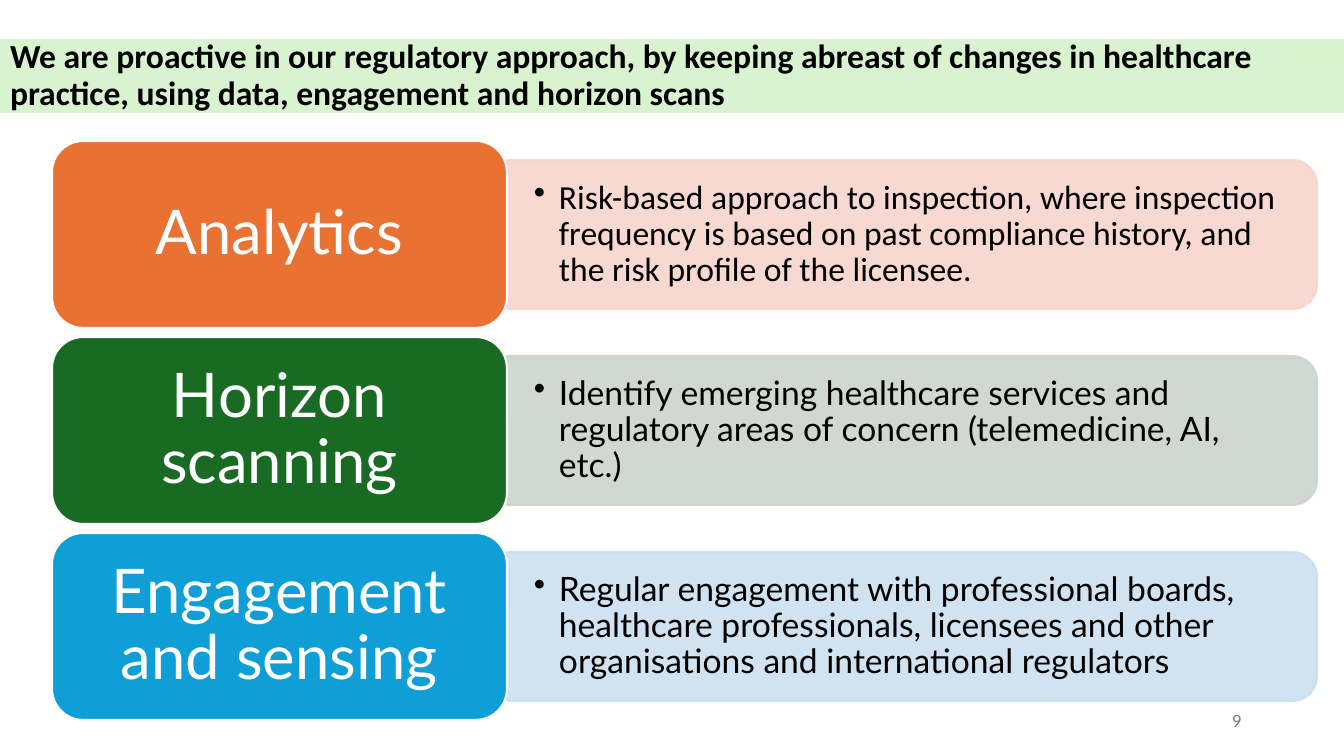
"""Build the slide on the proactive regulatory approach."""
import pptx
import pptx.util
import pptx.dml.color
import pptx.enum.shapes
import pptx.enum.text
import pptx.oxml
import pptx.oxml.ns

PX = 12192000 / 1344
RGB = pptx.dml.color.RGBColor
SHAPE = pptx.enum.shapes.MSO_SHAPE
ALIGN = pptx.enum.text.PP_ALIGN
BLACK, WHITE, GREY = RGB(0, 0, 0), RGB(255, 255, 255), RGB(0x79, 0x79, 0x79)
PALE_GREEN = RGB(0xD9, 0xF2, 0xD0)
ORANGE, GREEN, BLUE = RGB(0xE9, 0x71, 0x32), RGB(0x19, 0x6B, 0x24), RGB(0x0F, 0x9E, 0xD5)
PALE_ORANGE, GREY_GREEN, PALE_BLUE = RGB(0xF7, 0xD5, 0xCE), RGB(0xCC, 0xD4, 0xCD), RGB(0xCC, 0xDF, 0xEF)

ROWS = [
    ("Analytics", ORANGE, PALE_ORANGE, "Calibri",
     "Risk-based approach to inspection, where inspection frequency is based on past "
     "compliance history, and the risk profile of the licensee."),
    ("Horizon scanning", GREEN, GREY_GREEN, "Lato",
     "Identify emerging healthcare services and regulatory areas of concern "
     "(telemedicine, AI, etc.)"),
    ("Engagement and sensing", BLUE, PALE_BLUE, "Lato",
     "Regular engagement with professional boards, healthcare professionals, licensees "
     "and other organisations and international regulators"),
]
ROW_TOP, ROW_PITCH, LABEL_H = 141, 196, 187
PANEL_X, PANEL_LENGTH, PANEL_DEPTH = 507, 810, 149


def box(*lengths):
    return [round(n * PX) for n in lengths]


def write(sp, text, align, font, insets=(10, 5), spacing=0.9):
    tf = sp.text_frame
    dx, dy = box(*insets)
    frame = {"word_wrap": True, "auto_size": pptx.enum.text.MSO_AUTO_SIZE.NONE,
             "vertical_anchor": pptx.enum.text.MSO_ANCHOR.MIDDLE,
             "margin_left": dx, "margin_right": dx, "margin_top": dy, "margin_bottom": dy}
    for name, value in frame.items():
        setattr(tf, name, value)
    p = tf.paragraphs[0]
    p.alignment, p.line_spacing = align, spacing
    r = p.add_run()
    r.text = text
    face, size, color, bold = font
    for name, value in {"name": face, "size": pptx.util.Pt(size), "bold": bold}.items():
        setattr(r.font, name, value)
    r.font.color.rgb = color
    return p


prs = pptx.Presentation()
prs.slide_width, prs.slide_height = box(1344, 756)
s = prs.slides.add_slide(prs.slide_layouts[5])

title = s.shapes.title
title.left, title.top, title.width, title.height = box(0, 39, 1344, 74)
title.fill.solid()
title.fill.fore_color.rgb = PALE_GREEN
p = write(title, "We are proactive in our regulatory approach, by keeping abreast of changes "
          "in healthcare practice, using data, engagement and horizon scans",
          ALIGN.LEFT, ("Calibri", 24, BLACK, True))
p.space_before = pptx.util.Pt(10)

number = s.shapes.add_textbox(*box(950, 701, 302, 40))
write(number, "9", ALIGN.RIGHT, ("Lato", 12, GREY, False), spacing=1.0)

for i, (label, color, tint, face, detail) in enumerate(ROWS):
    top = ROW_TOP + i * ROW_PITCH
    middle = top + LABEL_H / 2

    panel = s.shapes.add_shape(SHAPE.ROUND_2_SAME_RECTANGLE, *box(
        PANEL_X + (PANEL_LENGTH - PANEL_DEPTH) / 2, middle - PANEL_LENGTH / 2,
        PANEL_DEPTH, PANEL_LENGTH))
    panel.rotation = 90
    tile = s.shapes.add_shape(SHAPE.ROUNDED_RECTANGLE, *box(52, top, 455, LABEL_H))
    for sp, fill, line in ((panel, tint, tint), (tile, color, WHITE)):
        sp.shadow.inherit = False
        sp.fill.solid()
        sp.fill.fore_color.rgb = fill
        sp.line.color.rgb = line
        sp.line.width = pptx.util.Pt(1.5)
    for clr in panel._element.spPr.iter(pptx.oxml.ns.qn("a:srgbClr")):
        clr.append(pptx.oxml.parse_xml(
            f'<a:alpha {pptx.oxml.ns.nsdecls("a")} val="90000"/>'))
    write(tile, label, ALIGN.CENTER, ("Lato", 44, WHITE, False), (27, 18))

    body = s.shapes.add_textbox(*box(PANEL_X, middle - 68, 802, 136))
    p = write(body, detail, ALIGN.LEFT, (face, 24, BLACK, False), (27, 14))
    pPr = p._p.get_or_add_pPr()
    indent = round(25 * PX)
    pPr.set("marL", str(indent))
    pPr.set("indent", str(-indent))
    pPr.append(pptx.oxml.parse_xml(
        f'<a:buChar {pptx.oxml.ns.nsdecls("a")} char="•"/>'))

prs.save("out.pptx")
